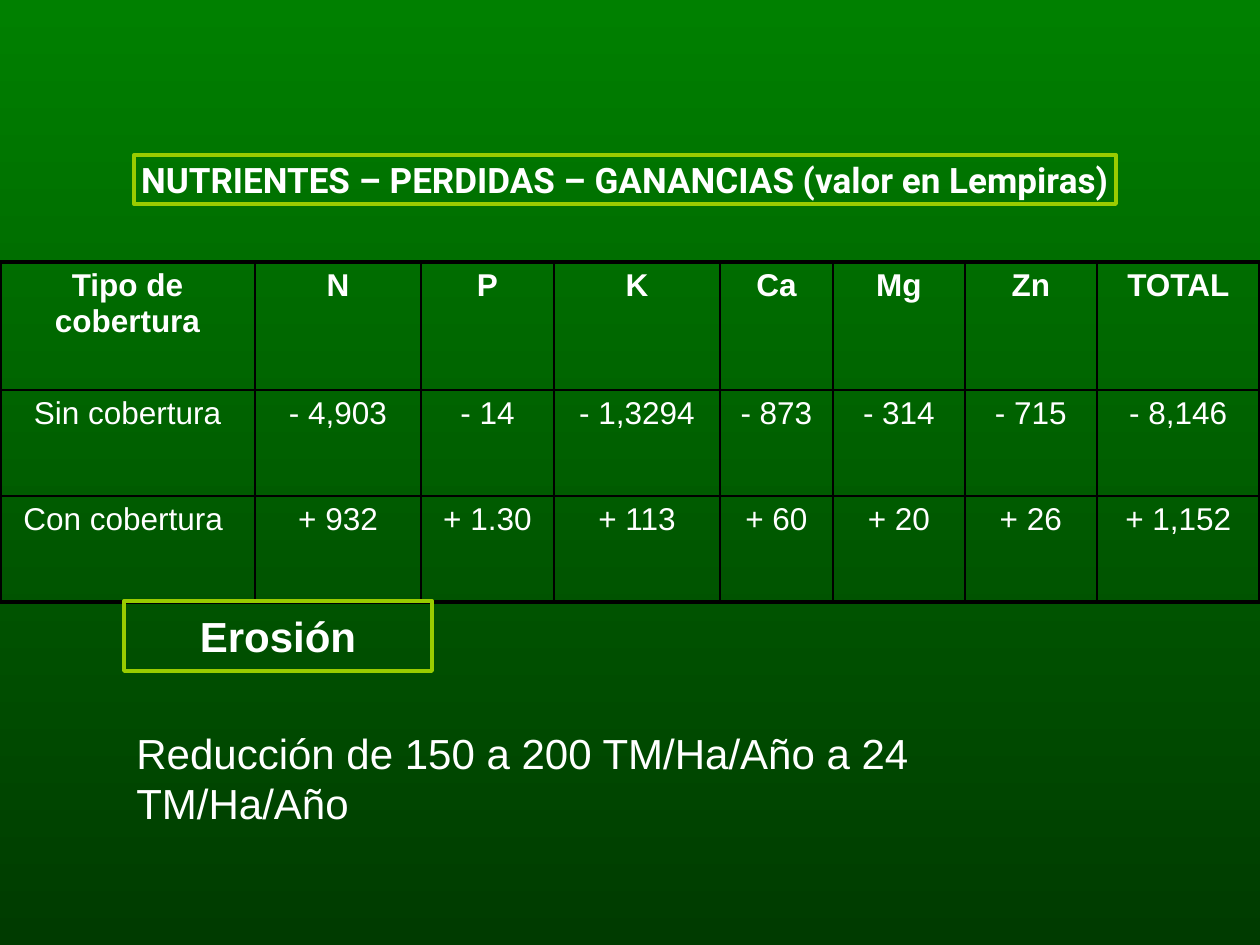
from dataclasses import dataclass

from lxml import etree
from pptx import Presentation, util as u
from pptx.dml.color import RGBColor
from pptx.enum import shapes, text
from pptx.oxml import ns

PX = 914400 // 126


@dataclass(frozen=True)
class Theme:
    top: str = "008000"
    bottom: str = "003B00"
    frame: str = "99CC00"
    ink: str = "FFFFFF"
    border: str = "000000"
    body_font: str = "Arial"
    title_font: str = "Roboto"
    table_size: int = 18
    title_size: int = 20
    body_size: int = 24
    thin: float = 1
    thick: float = 2.25


THEME = Theme()
COLUMNS = [255, 166, 133, 166, 113, 132, 132, 163]
ROW_HEIGHTS = [128, 106, 106]
NUTRIENTS = [
    ["Tipo de cobertura", "N", "P", "K", "Ca", "Mg", "Zn", "TOTAL"],
    ["Sin cobertura", "- 4,903", "- 14", "- 1,3294", "- 873", "- 314", "- 715", "- 8,146"],
    ["Con cobertura ", "+ 932", "+ 1.30", "+ 113", "+ 60", "+ 20", "+ 26", "+ 1,152"],
]


def px(*lengths):
    return [u.Emu(length * PX) for length in lengths]


def color(value):
    return RGBColor.from_string(value)


def write(paragraph, words, size, bold=False, font=THEME.body_font,
          align=text.PP_ALIGN.CENTER):
    paragraph.alignment = align
    run = paragraph.add_run()
    run.text = words
    run.font.name = font
    run.font.size = u.Pt(size)
    run.font.bold = bold
    run.font.color.rgb = color(THEME.ink)


def paint_background(slide):
    fill = slide.background.fill
    fill.gradient()
    fill.gradient_angle = 270
    for stop, value in zip(fill.gradient_stops, (THEME.top, THEME.bottom)):
        stop.color.rgb = color(value)


def add_framed_label(slide, box, words, size, font):
    shape = slide.shapes.add_shape(shapes.MSO_SHAPE.RECTANGLE, *px(*box))
    shape.shadow.inherit = False
    shape.fill.background()
    shape.line.color.rgb = color(THEME.frame)
    shape.line.width = u.Pt(THEME.thick)
    frame = shape.text_frame
    frame.word_wrap = False
    frame.vertical_anchor = text.MSO_ANCHOR.MIDDLE
    write(frame.paragraphs[0], words, size, True, font)


def set_borders(cell, outer_sides):
    """Draw all four borders, thick on the sides at the table's edge."""
    properties = cell._tc.get_or_add_tcPr()
    for side in "LRTB":
        width = THEME.thick if side in outer_sides else THEME.thin
        line = etree.SubElement(properties, ns.qn(f"a:ln{side}"), w=str(u.Pt(width)))
        fill = etree.SubElement(line, ns.qn("a:solidFill"))
        etree.SubElement(fill, ns.qn("a:srgbClr"), val=THEME.border)


def add_nutrient_table(slide, left, top):
    last_row, last_column = len(ROW_HEIGHTS) - 1, len(COLUMNS) - 1
    box = px(left, top, sum(COLUMNS), sum(ROW_HEIGHTS))
    table = slide.shapes.add_table(len(ROW_HEIGHTS), len(COLUMNS), *box).table
    table.first_row = table.horz_banding = False
    for column, width in zip(table.columns, px(*COLUMNS)):
        column.width = width
    for row, height in zip(table.rows, px(*ROW_HEIGHTS)):
        row.height = height
    for i, values in enumerate(NUTRIENTS):
        for j, value in enumerate(values):
            cell = table.cell(i, j)
            edges = {"T": i == 0, "B": i == last_row, "L": j == 0, "R": j == last_column}
            set_borders(cell, [side for side, outer in edges.items() if outer])
            cell.fill.background()
            write(cell.text_frame.paragraphs[0], value, THEME.table_size, bold=i == 0)


def add_statement(slide, box, words):
    frame = slide.shapes.add_textbox(*px(*box)).text_frame
    frame.word_wrap = True
    paragraph = frame.paragraphs[0]
    write(paragraph, words, THEME.body_size, align=text.PP_ALIGN.LEFT)


def main():
    presentation = Presentation()
    presentation.slide_width, presentation.slide_height = px(1260, 945)
    slide = presentation.slides.add_slide(presentation.slide_layouts[6])
    paint_background(slide)
    add_framed_label(slide, (134, 155, 982, 49),
                     "NUTRIENTES – PERDIDAS – GANANCIAS (valor en Lempiras)",
                     THEME.title_size, THEME.title_font)
    add_nutrient_table(slide, 0, 262)
    add_statement(slide, (124, 721, 972, 115),
                  "Reducción de 150 a 200 TM/Ha/Año a 24 TM/Ha/Año")
    add_framed_label(slide, (124, 601, 308, 70), "Erosión",
                     THEME.body_size, THEME.body_font)
    presentation.save("out.pptx")


if __name__ == "__main__":
    main()
